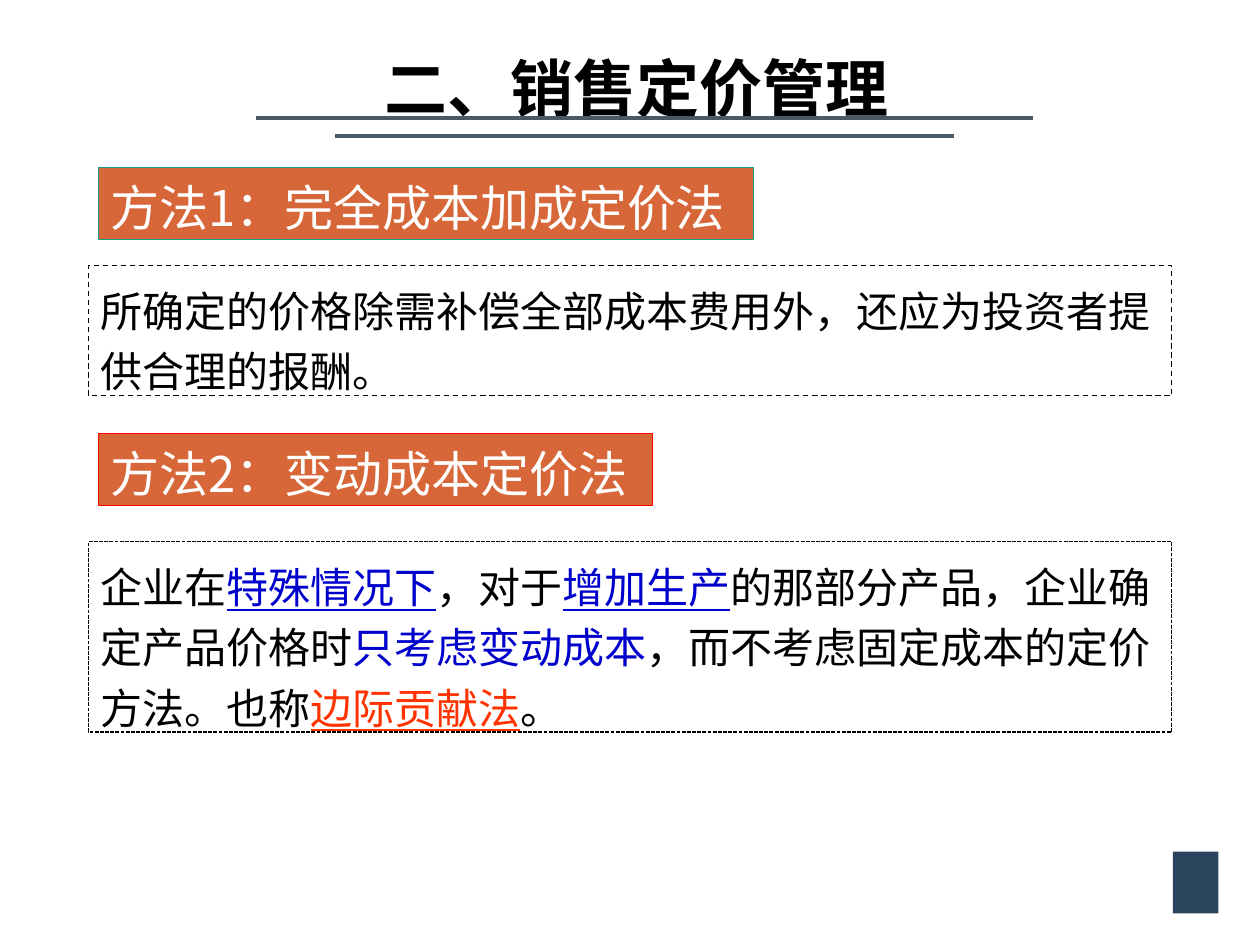
from dataclasses import dataclass
from lxml.etree import SubElement
from pptx import Presentation
from pptx.dml.color import RGBColor
from pptx.enum.dml import MSO_LINE
from pptx.enum.shapes import MSO_CONNECTOR, MSO_SHAPE
from pptx.enum.text import MSO_ANCHOR, MSO_AUTO_SIZE, PP_ALIGN
from pptx.oxml.ns import qn
from pptx.util import Inches, Pt


@dataclass(frozen=True)
class Theme:
    font: str = "Noto Sans CJK SC"
    head: int = 36
    label: int = 28
    body: int = 24
    ink: str = "000000"
    white: str = "FFFFFF"
    blue: str = "0000CC"
    red: str = "FF3300"
    orange: str = "D76739"
    slate: str = "495A66"
    navy: str = "2A445D"


T = Theme()


def rgb(code):
    return RGBColor.from_string(code)


def place(shape, box):
    shape.left, shape.top, shape.width, shape.height = map(Inches, box)


def write(shape, runs, size, color, pitch, top=0.08, right=0.1, bold=False):
    """Fill a shape with one paragraph; runs are (text, color, underline)."""
    frame = shape.text_frame
    frame.word_wrap = True
    frame.auto_size = MSO_AUTO_SIZE.NONE
    frame.vertical_anchor = MSO_ANCHOR.TOP
    frame.margin_left, frame.margin_right = Inches(0.1), Inches(right)
    frame.margin_top, frame.margin_bottom = Inches(top), 0
    para = frame.paragraphs[0]
    para.alignment = PP_ALIGN.LEFT
    para.line_spacing = Pt(pitch)
    font = para.font
    font.name, font.size, font.bold = T.font, Pt(size), bold
    font.color.rgb = rgb(color)
    east = SubElement(para._p.pPr.find(qn("a:defRPr")), qn("a:ea"))
    east.set("typeface", T.font)
    for text, tint, under in runs:
        run = para.add_run()
        run.text = text
        if tint:
            run.font.color.rgb = rgb(tint)
        if under:
            run.font.underline = True


def panel(slide, box, fill=None, line=None, width=0.75, dash=None):
    shape = slide.shapes.add_shape(MSO_SHAPE.RECTANGLE, *map(Inches, box))
    shape.shadow.inherit = False
    if fill:
        shape.fill.solid()
        shape.fill.fore_color.rgb = rgb(fill)
    else:
        shape.fill.background()
    if line:
        shape.line.color.rgb = rgb(line)
        shape.line.width = Pt(width)
        if dash:
            shape.line.dash_style = dash
    else:
        shape.line.fill.background()
    return shape


def header(slide, box, text):
    x, y, w, h = box
    # Title
    title = slide.shapes.title
    place(title, (x + 0.92, y, 5.38, h))
    write(title, [(text, None, False)], T.head, T.ink, 64, top=0.1, bold=True)
    # Two rules, the lower one shorter
    for start, end, drop in ((0, w, 0.94), (0.63, 5.54, 1.08)):
        rule = slide.shapes.add_connector(
            MSO_CONNECTOR.STRAIGHT,
            *map(Inches, (x + start, y + drop, x + end, y + drop)))
        rule.line.color.rgb = rgb(T.slate)
        rule.line.width = Pt(2.25)
        SubElement(rule._element.spPr, qn("a:effectLst"))


def method(slide, box, label, wide, edge, gap, dash, runs):
    x, y, w, h = box
    # Label bar
    bar_h = 0.57
    bar = panel(slide, (x + 0.08, y, wide, bar_h), T.orange, edge, 0.5)
    write(bar, [(label, None, False)], T.label, T.white, 33.6, right=0)
    # Dashed explanation
    top = bar_h + gap
    note = panel(slide, (x, y + top, w, h - top), None, T.ink, dash=dash)
    write(note, runs, T.body, T.ink, 34.4)


def main():
    deck = Presentation()
    deck.slide_width, deck.slide_height = Inches(10), Inches(7.5)
    slide = deck.slides.add_slide(deck.slide_layouts[5])

    # Corner block
    panel(slide, (9.31, 6.76, 0.36, 0.49), T.navy)
    header(slide, (2.03, 0, 6.17, 1.01), "二、销售定价管理")
    method(slide, (0.7, 1.33, 8.6, 1.81), "方法1：完全成本加成定价法",
           5.2, "179E86", 0.21, MSO_LINE.DASH, [
               ("所确定的价格除需补偿全部成本费用外，还应为投资者提供合理的报酬。",
                None, False)])
    method(slide, (0.7, 3.44, 8.6, 2.37), "方法2：变动成本定价法",
           4.4, "FF0000", 0.29, MSO_LINE.SQUARE_DOT, [
               ("企业在", None, False),
               ("特殊情况下", T.blue, True),
               ("，对于", None, False),
               ("增加生产", T.blue, True),
               ("的那部分产品，企业确定产品价格时", None, False),
               ("只考虑变动成本", T.blue, False),
               ("，而不考虑固定成本的定价方法。也称", None, False),
               ("边际贡献法", T.red, True),
               ("。", None, False)])
    deck.save("out.pptx")


if __name__ == "__main__":
    main()
